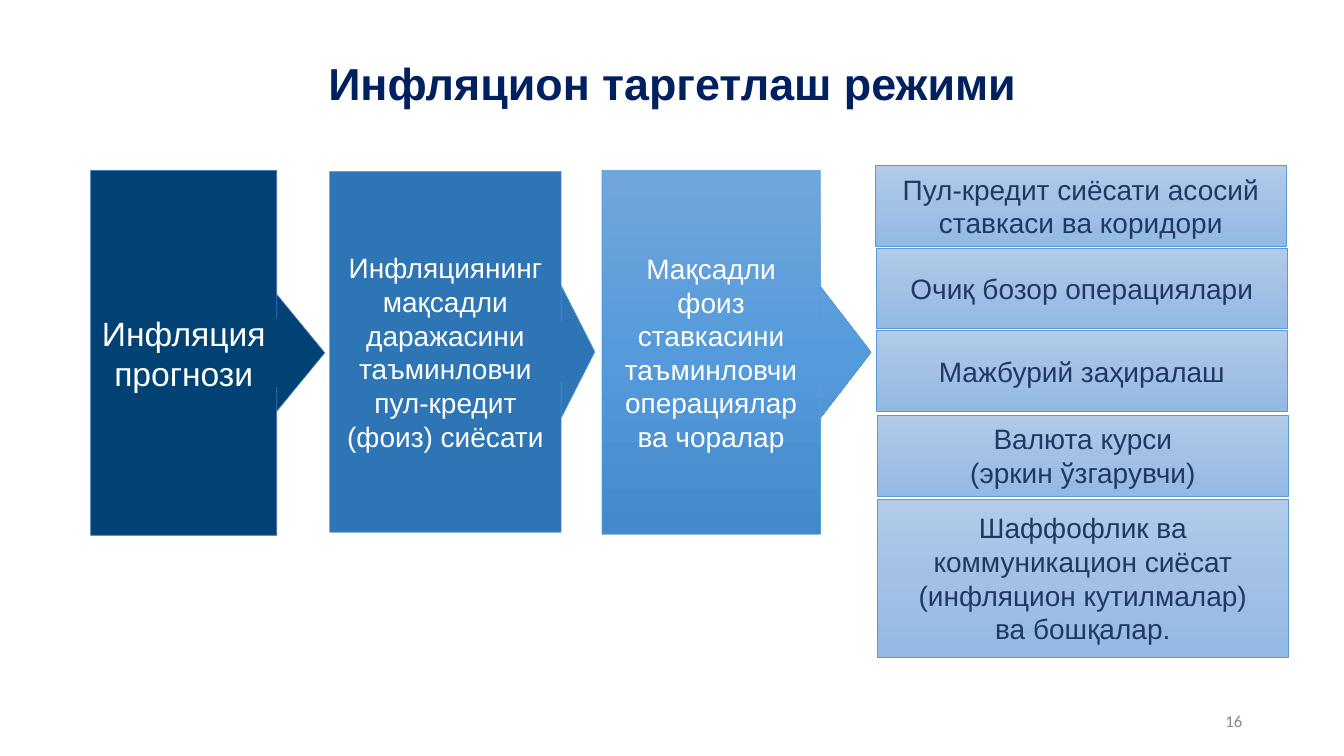
"""Builds the slide on the inflation targeting regime."""
from copy import deepcopy

from pptx import Presentation
from pptx.dml.color import RGBColor
from pptx.enum.shapes import MSO_SHAPE as Shape
from pptx.enum.text import MSO_ANCHOR as Anchor, PP_ALIGN as Align
from pptx.oxml.ns import qn
from pptx.util import Inches, Pt

COLORS = {
    "title": "002060", "number": "898989", "white": "FFFFFF", "ink": "203864",
    "navy": "004274", "blue": "2E75B6", "navy_edge": "4472C4", "edge": "5B9BD5",
    "sky_top": "71A6DB", "sky_mid": "559BDB", "sky_low": "448ACA",
    "pale_top": "B1CBE9", "pale_mid": "A3C1E5", "pale_low": "93B9E4",
}
TITLE = "Инфляцион таргетлаш режими"
PAGE_NUMBER = "16"
STAGES = [
    dict(text="Инфляция прогнози", at=(0.9, 1.69, 2.32, 3.62), size=24,
         shape=(0.293, 0.25, 0.205, 0.795), fill=["navy"], edge="navy_edge"),
    dict(text="Инфляциянинг мақсадли даражасини таъминловчи пул-кредит (фоиз) сиёсати",
         at=(3.27, 1.7, 2.63, 3.58), size=20,
         shape=(0.23, 0.25, 0.127, 0.873), fill=["blue"], edge="edge"),
    dict(text="Мақсадли фоиз ставкасини таъминловчи операциялар ва чоралар",
         at=(5.97, 1.69, 2.67, 3.61), size=20,
         shape=(0.252, 0.245, 0.189, 0.811),
         fill=["sky_top", "sky_mid", "sky_low"], edge="edge"),
]
TOOLS = [
    ("Пул-кредит сиёсати асосий ставкаси ва коридори", 8.68, 1.64, 0.8),
    ("Очиқ бозор операциялари", 8.69, 2.46, 0.8),
    ("Мажбурий заҳиралаш", 8.69, 3.28, 0.8),
    ("Валюта курси\n(эркин ўзгарувчи)", 8.7, 4.12, 0.8),
    ("Шаффофлик ва коммуникацион сиёсат (инфляцион кутилмалар)\nва бошқалар.",
     8.7, 4.95, 1.57),
]
TOOL_WIDTH = 4.08
TOOL_FILL = ["pale_top", "pale_mid", "pale_low"]


def rgb(name):
    return RGBColor.from_string(COLORS[name])


def write(box, text, size, color, font="Arial", bold=False, align=Align.CENTER, spacing=1.0):
    frame = box.text_frame
    frame.word_wrap = True
    frame.vertical_anchor = Anchor.MIDDLE
    para = frame.paragraphs[0]
    para.text = text
    para.alignment = align
    para.line_spacing = spacing
    for span in para.runs:
        span.font.name = font
        span.font.size = Pt(size)
        span.font.bold = bold
        span.font.color.rgb = rgb(color)


def paint(box, fill, edge):
    box.shadow.inherit = False
    box.line.color.rgb = rgb(edge)
    box.line.width = Pt(0.5)
    if len(fill) == 1:
        box.fill.solid()
        box.fill.fore_color.rgb = rgb(fill[0])
        return
    box.fill.gradient()
    box.fill.gradient_angle = 270
    stop_list = box._element.spPr.find(qn("a:gradFill")).find(qn("a:gsLst"))
    stop_list.insert(1, deepcopy(stop_list[0]))
    for index, (stop, name) in enumerate(zip(box.fill.gradient_stops, fill)):
        stop.position = index / (len(fill) - 1)
        stop.color.rgb = rgb(name)


def add_block(page, kind, at, fill, edge):
    box = page.shapes.add_shape(kind, *map(Inches, at))
    paint(box, fill, edge)
    return box


def main():
    deck = Presentation()
    deck.slide_width, deck.slide_height = Inches(13.33), Inches(7.5)
    page = deck.slides.add_slide(deck.slide_layouts[6])

    title = page.shapes.add_textbox(*map(Inches, (0.92, 0.4, 11.5, 0.91)))
    write(title, TITLE, 32, "title", bold=True, spacing=0.9)
    number = page.shapes.add_textbox(*map(Inches, (9.42, 6.95, 3, 0.4)))
    write(number, PAGE_NUMBER, 12, "number", font="Calibri", align=Align.RIGHT)

    for stage in STAGES:
        box = add_block(page, Shape.RIGHT_ARROW_CALLOUT, stage["at"], stage["fill"], stage["edge"])
        for index, value in enumerate(stage["shape"]):
            box.adjustments[index] = value
        write(box, stage["text"], stage["size"], "white")

    for text, left, top, height in TOOLS:
        box = add_block(page, Shape.RECTANGLE, (left, top, TOOL_WIDTH, height), TOOL_FILL, "edge")
        write(box, text, 20, "ink")

    deck.save("out.pptx")


if __name__ == "__main__":
    main()
